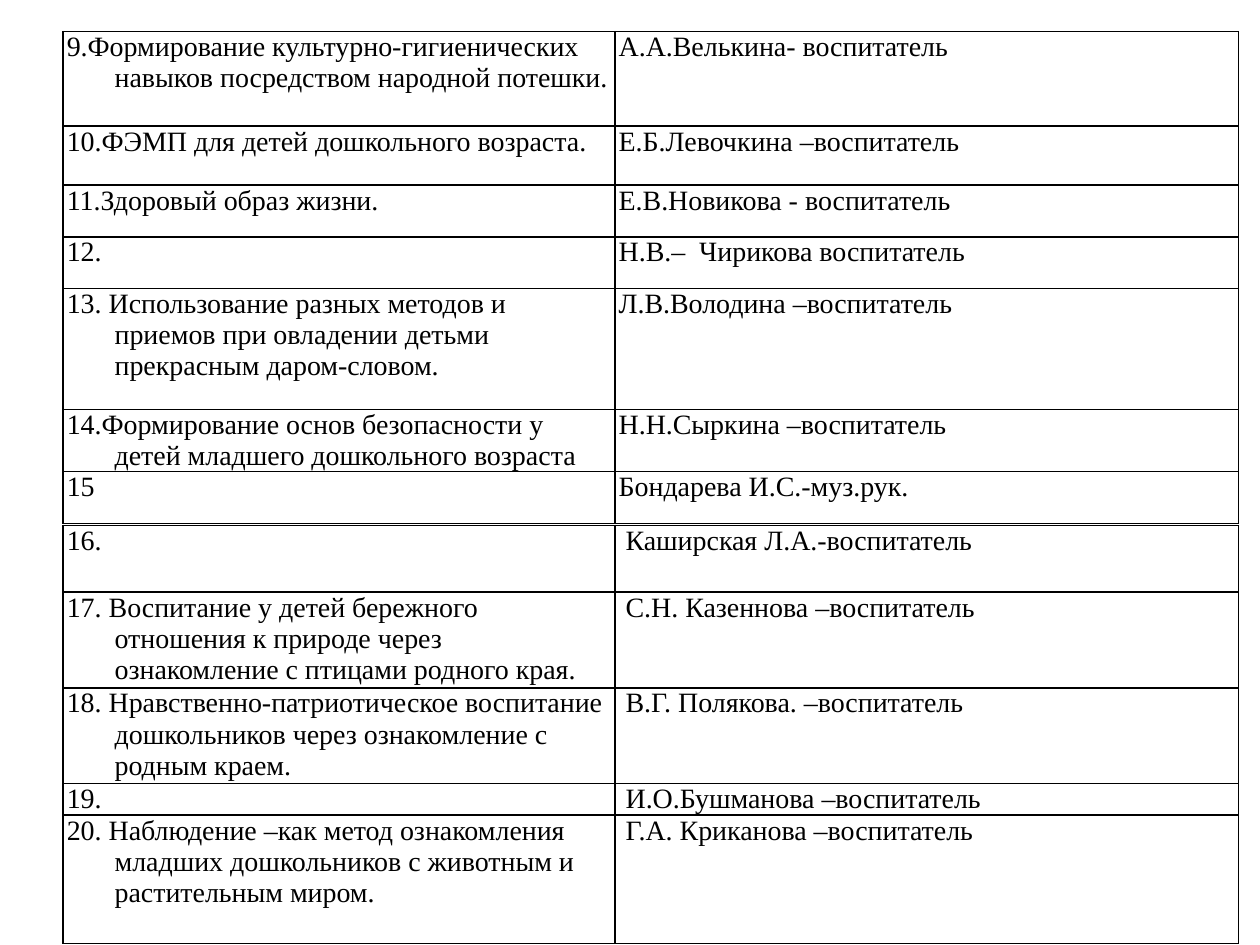
from lxml.etree import SubElement
from pptx import Presentation
from pptx.dml.color import RGBColor
from pptx.oxml.ns import qn
from pptx.util import Inches, Pt

THEME = {"font": "Times New Roman", "size": Pt(16), "ink": "000000", "border": Pt(1)}

LEFT = 0.5
COLUMN_WIDTHS = (4.38, 4.95)
CELL_MARGIN = 0.03
HANGING = 0.38

TABLES = [
    (0.25, [
        (0.75, "9.Формирование культурно-гигиенических навыков посредством народной потешки.",
         "А.А.Велькина- воспитатель"),
        (0.47, "10.ФЭМП для детей дошкольного возраста.", "Е.Б.Левочкина –воспитатель"),
        (0.41, "11.Здоровый образ жизни.", "Е.В.Новикова - воспитатель"),
        (0.41, "12.", "Н.В.–  Чирикова воспитатель"),
        (0.96, "13. Использование разных методов и приемов при овладении детьми прекрасным даром-словом.",
         "Л.В.Володина –воспитатель"),
        (0.41, "14.Формирование основ безопасности у детей младшего дошкольного возраста",
         "Н.Н.Сыркина –воспитатель"),
        (0.41, "15", "Бондарева И.С.-муз.рук."),
    ]),
    (4.17, [
        (0.53, "16.", " Каширская Л.А.-воспитатель"),
        (0.76, "17. Воспитание у детей бережного отношения к природе через ознакомление с птицами родного края.",
         " С.Н. Казеннова –воспитатель"),
        (0.76, "18. Нравственно-патриотическое воспитание дошкольников через ознакомление с родным краем.",
         " В.Г. Полякова. –воспитатель"),
        (0.25, "19.", " И.О.Бушманова –воспитатель"),
        (1.02, "20. Наблюдение –как метод ознакомления младших дошкольников с животным и растительным миром.",
         " Г.А. Криканова –воспитатель"),
    ]),
]


def add_borders(cell):
    properties = cell._tc.get_or_add_tcPr()
    for side in ("a:lnL", "a:lnR", "a:lnT", "a:lnB"):
        line = SubElement(properties, qn(side), w=str(THEME["border"]))
        fill = SubElement(line, qn("a:solidFill"))
        SubElement(fill, qn("a:srgbClr"), val=THEME["ink"])


def fill_cell(cell, text, hanging):
    cell.margin_left = cell.margin_right = Inches(CELL_MARGIN)
    cell.margin_top = cell.margin_bottom = 0
    add_borders(cell)
    cell.fill.background()
    cell.text_frame.text = text
    para = cell.text_frame.paragraphs[0]
    if hanging:
        properties = para._p.get_or_add_pPr()
        properties.set("marL", str(Inches(HANGING)))
        properties.set("indent", str(-Inches(HANGING)))
    font = para.runs[0].font
    font.name = THEME["font"]
    font.size = THEME["size"]
    font.color.rgb = RGBColor.from_string(THEME["ink"])


def add_topic_table(page, top, rows):
    height = sum(row[0] for row in rows)
    frame = page.shapes.add_table(
        len(rows), len(COLUMN_WIDTHS), Inches(LEFT), Inches(top),
        Inches(sum(COLUMN_WIDTHS)), Inches(height))
    table = frame.table
    table.first_row = table.horz_banding = False
    for column, width in zip(table.columns, COLUMN_WIDTHS):
        column.width = Inches(width)
    for row, (row_height, *texts) in zip(table.rows, rows):
        row.height = Inches(row_height)
        for index, (cell, text) in enumerate(zip(row.cells, texts)):
            fill_cell(cell, text, hanging=index == 0)


def main():
    deck = Presentation()
    deck.slide_width, deck.slide_height = Inches(10), Inches(7.5)
    page = deck.slides.add_slide(deck.slide_layouts[6])
    for top, rows in TABLES:
        add_topic_table(page, top, rows)
    deck.save("out.pptx")


if __name__ == "__main__":
    main()
